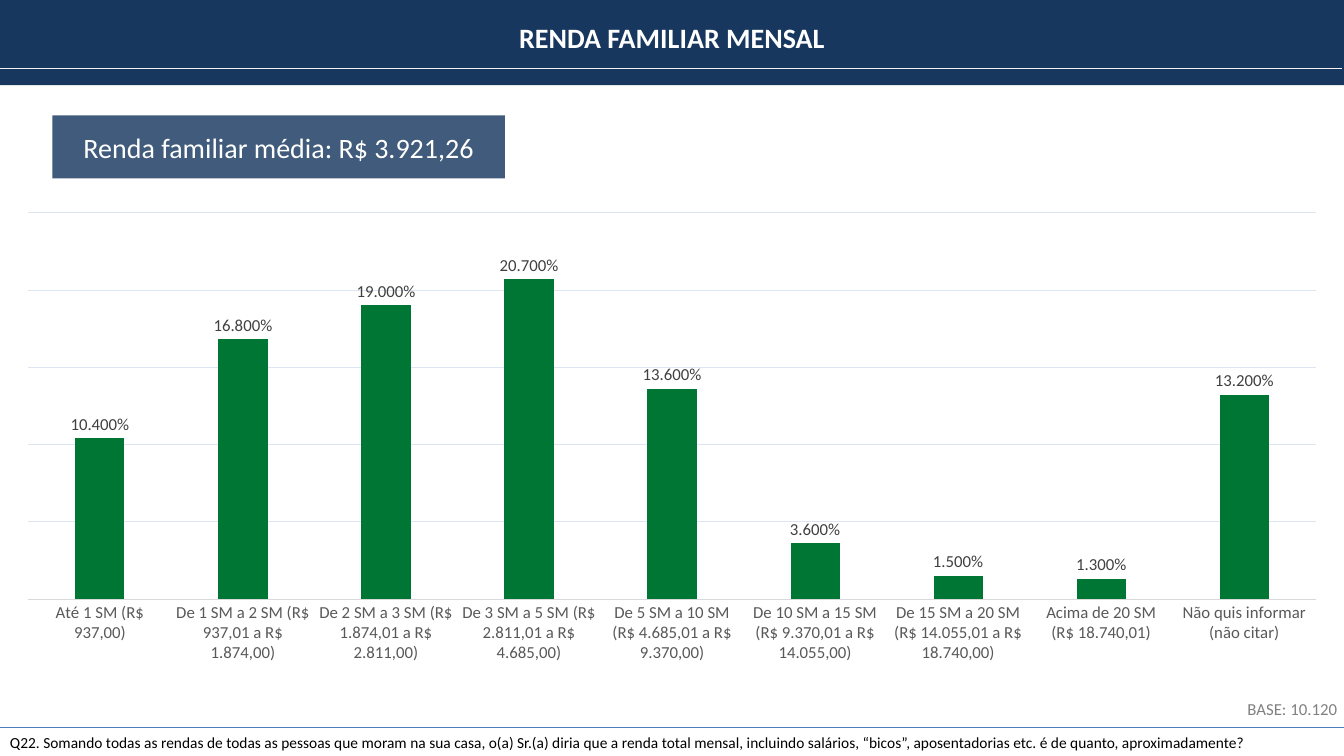
from dataclasses import dataclass

from lxml import etree
from pptx import Presentation
from pptx import util as u
from pptx.chart.data import CategoryChartData
from pptx.dml.color import RGBColor
from pptx.enum import chart as ch
from pptx.enum import shapes, text
from pptx.oxml import parse_xml
from pptx.oxml.ns import nsdecls, qn


@dataclass(frozen=True)
class Theme:
    font: str = "Calibri"
    navy: str = "17375E"
    green: str = "007635"
    white: str = "FFFFFF"
    black: str = "000000"
    rule: str = "F2F2F2"
    footer_rule: str = "4B7EBC"
    base: str = "808080"
    label: str = "404040"
    category: str = "595959"
    axis: str = "D9D9D9"
    grid: str = "DCE6F2"
    heading: int = 20
    small: int = 12
    note: int = 11


T = Theme()
W, H = 1280, 720
INCOME = [
    ("Até 1 SM (R$ 937,00)", 0.104),
    ("De 1 SM a 2 SM (R$ 937,01 a R$ 1.874,00)", 0.168),
    ("De 2 SM a 3 SM (R$ 1.874,01 a R$ 2.811,00)", 0.19),
    ("De 3 SM a 5 SM (R$ 2.811,01 a R$ 4.685,00)", 0.207),
    ("De 5 SM a 10 SM (R$ 4.685,01 a R$ 9.370,00)", 0.136),
    ("De 10 SM a 15 SM (R$ 9.370,01 a R$ 14.055,00)", 0.036),
    ("De 15 SM a 20 SM (R$ 14.055,01 a R$ 18.740,00)", 0.015),
    ("Acima de 20 SM (R$ 18.740,01)", 0.013),
    ("Não quis informar (não citar)", 0.132),
]
PLOT = {"x": 0.012, "y": 0.067, "w": 0.977, "h": 0.778}


def px(n):
    return u.Emu(n * 9525)


def rgb(color):
    return RGBColor.from_string(color)


def style_font(font, size, color, bold=False):
    font.name, font.size, font.bold = T.font, u.Pt(size), bold
    font.color.rgb = rgb(color)


def write(sp, words, size=T.small, color=T.black, bold=False,
          align=text.PP_ALIGN.LEFT, anchor=text.MSO_ANCHOR.TOP):
    tf = sp.text_frame
    tf.word_wrap = True
    tf.auto_size = text.MSO_AUTO_SIZE.NONE
    tf.vertical_anchor = anchor
    p = tf.paragraphs[0]
    p.alignment = align
    r = p.add_run()
    r.text = words
    style_font(r.font, size, color, bold)


def add_rect(s, box, color):
    sp = s.shapes.add_shape(shapes.MSO_SHAPE.RECTANGLE, *map(px, box))
    sp.shadow.inherit = False
    sp.fill.solid()
    sp.fill.fore_color.rgb = rgb(color)
    sp.line.fill.background()
    return sp


def add_rule(s, x, y, w, color, weight):
    line = s.shapes.add_connector(
        shapes.MSO_CONNECTOR.STRAIGHT, px(x), px(y), px(x + w), px(y))
    line.line.color.rgb = rgb(color)
    line.line.width = u.Pt(weight)
    etree.SubElement(line.element.spPr, qn("a:effectLst"))


def add_header(s, box, words):
    x, y, w, h = box
    band = add_rect(s, box, T.navy)
    title = s.shapes.title
    title.left, title.top, title.width, title.height = map(px, (x, y + 15, w, 42))
    write(title, words, size=T.heading, color=T.white, bold=True,
          align=text.PP_ALIGN.CENTER)
    band.element.addnext(title.element)
    add_rule(s, x - 3, y + 65, w + 1, T.rule, 1)


def add_footer(s, box, base, question):
    x, y, w, h = box
    add_rule(s, x, y + 32, w, T.footer_rule, 0.75)
    note = s.shapes.add_textbox(*map(px, (x, y + 32, w - 2, 28)))
    write(note, question, size=T.note)
    sample = s.shapes.add_textbox(*map(px, (x + w - 216, y, 219, 29)))
    write(sample, base, color=T.base, align=text.PP_ALIGN.RIGHT)


def add_income_chart(s, box, rows):
    data = CategoryChartData(number_format="#.#00%")
    data.categories = [name for name, _ in rows]
    data.add_series("Renda", [share for _, share in rows])
    chart = s.shapes.add_chart(
        ch.XL_CHART_TYPE.COLUMN_CLUSTERED, *map(px, box), data).chart
    chart.has_legend = chart.has_title = False
    style_font(chart.font, 10, T.black)

    plot = chart.plots[0]
    plot.vary_by_categories = False
    plot.gap_width, plot.overlap = 191, -27
    fill = plot.series[0].format.fill
    fill.solid()
    fill.fore_color.rgb = rgb(T.green)

    plot.has_data_labels = True
    labels = plot.data_labels
    labels.show_value = True
    labels.number_format, labels.number_format_is_linked = "#.#00%", False
    labels.position = ch.XL_LABEL_POSITION.OUTSIDE_END
    style_font(labels.font, T.small, T.label)

    cat = chart.category_axis
    cat.major_tick_mark = cat.minor_tick_mark = ch.XL_TICK_MARK.NONE
    style_font(cat.tick_labels.font, T.small, T.category)
    val = chart.value_axis
    val.minimum_scale, val.maximum_scale, val.major_unit = 0, 0.25, 0.05
    val.has_major_gridlines = True
    val.visible = False
    for part, color in ((cat, T.axis), (val.major_gridlines, T.grid)):
        part.format.line.color.rgb = rgb(color)
        part.format.line.width = u.Pt(0.75)

    area = chart.element.chart.plotArea
    for old in area.findall(qn("c:layout")):
        area.remove(old)
    modes = '<c:layoutTarget val="inner"/><c:xMode val="edge"/><c:yMode val="edge"/>'
    sizes = "".join(f'<c:{k} val="{v}"/>' for k, v in PLOT.items())
    area.insert(0, parse_xml(
        f'<c:layout {nsdecls("c")}><c:manualLayout>{modes}{sizes}'
        '</c:manualLayout></c:layout>'))


def add_average(s, box, words):
    sp = add_rect(s, box, T.navy)
    color = sp.element.spPr.find(qn("a:solidFill"))[0]
    etree.SubElement(color, qn("a:alpha"), val="82000")
    write(sp, words, size=T.heading, color=T.white,
          align=text.PP_ALIGN.CENTER, anchor=text.MSO_ANCHOR.MIDDLE)


def main():
    prs = Presentation()
    prs.slide_width, prs.slide_height = px(W), px(H)
    s = prs.slides.add_slide(prs.slide_layouts[5])
    add_footer(
        s, (0, 661, W, 59), "BASE: 10.120",
        "Q22. Somando todas as rendas de todas as pessoas que moram na sua casa, "
        "o(a) Sr.(a) diria que a renda total mensal, incluindo salários, “bicos”, "
        "aposentadorias etc. é de quanto, aproximadamente?")
    add_header(s, (0, 0, W, 81), "RENDA FAMILIAR MENSAL")
    add_income_chart(s, (12, 171, 1255, 473), INCOME)
    add_average(s, (50, 110, 431, 60), "Renda familiar média: R$ 3.921,26")
    prs.save("out.pptx")


if __name__ == "__main__":
    main()
